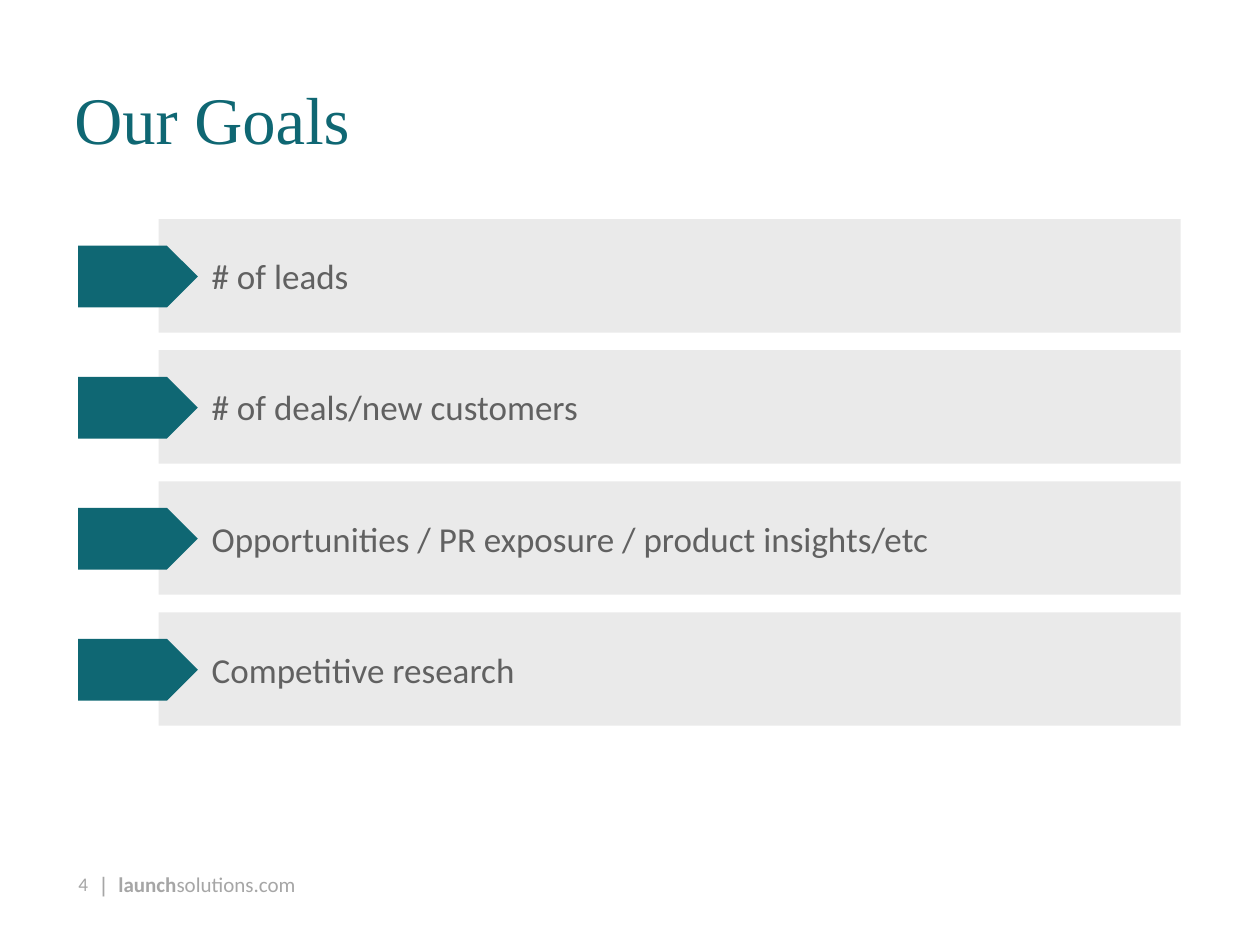
"""Build the goals slide: a title, four arrow-marked bars and a footer."""
from lxml.etree import SubElement
from pptx import Presentation
from pptx.dml.color import RGBColor
from pptx.enum.shapes import MSO_SHAPE as Shape
from pptx.enum.text import MSO_ANCHOR as Anchor, MSO_AUTO_SIZE as Fit, PP_ALIGN as Align
from pptx.oxml.ns import qn
from pptx.util import Inches, Pt

TEAL = RGBColor(0x0F, 0x67, 0x73)
PALE = RGBColor(0xEA, 0xEA, 0xEA)
DARK = RGBColor(0x61, 0x61, 0x61)
GREY = RGBColor(0xA6, 0xA6, 0xA6)
GOALS = [
    "# of leads",
    "# of deals/new customers",
    "Opportunities / PR exposure / product insights/etc",
    "Competitive research",
]
TOP, STEP = 1.74, 1.04


def style(para, face, size, color, align=Align.LEFT):
    para.alignment = align
    para.font.name = face
    para.font.size = Pt(size)
    para.font.color.rgb = color


def prep(frame, anchor, left=0, top=0, right=0, foot=0):
    frame.word_wrap = True
    frame.auto_size = Fit.NONE
    frame.vertical_anchor = anchor
    frame.margin_left, frame.margin_top = Inches(left), Inches(top)
    frame.margin_right, frame.margin_bottom = Inches(right), Inches(foot)
    return frame.paragraphs[0]


deck = Presentation()
deck.slide_width, deck.slide_height = Inches(10), Inches(7.5)
slide = deck.slides.add_slide(deck.slide_layouts[5])
shapes = slide.shapes

title = shapes.title
title.left, title.top = Inches(0.59), Inches(0)
title.width, title.height = Inches(8.75), Inches(1.25)
para = prep(title.text_frame, Anchor.BOTTOM)
para.text = "Our Goals"
style(para, "Times New Roman", 38, TEAL)

for row, goal in enumerate(GOALS):
    top = TOP + row * STEP
    bar = shapes.add_shape(Shape.RECTANGLE, Inches(1.26), Inches(top), Inches(8.11), Inches(0.9))
    arrow = shapes.add_shape(Shape.PENTAGON, Inches(0.62), Inches(top + 0.21), Inches(0.95), Inches(0.49))
    for shape, color in ((bar, PALE), (arrow, TEAL)):
        shape.shadow.inherit = False
        shape.fill.solid()
        shape.fill.fore_color.rgb = color
        shape.line.fill.background()
    para = prep(bar.text_frame, Anchor.MIDDLE, 0.42, 0.04, 0.09, 0.04)
    para.text = goal
    style(para, "Calibri", 20, DARK)

site = shapes.add_textbox(Inches(0.8), Inches(6.92), Inches(1.7), Inches(0.2))
para = prep(site.text_frame, Anchor.BOTTOM)
tabs = SubElement(para._p.get_or_add_pPr(), qn("a:tabLst"))
SubElement(tabs, qn("a:tab"), pos=str(Inches(0.14)), algn="l")
style(para, "Calibri", 12, GREY)
for text, face, bold in (("|\t", "Arial", False), ("launch", "Calibri", True), ("solutions.com", "Calibri", False)):
    run = para.add_run()
    run.text = text
    run.font.name = face
    run.font.bold = bold

page = shapes.add_textbox(Inches(0.08), Inches(6.71), Inches(0.62), Inches(0.4))
para = prep(page.text_frame, Anchor.BOTTOM)
para.text = "4"
style(para, "Calibri", 11, GREY, Align.RIGHT)

deck.save("out.pptx")
